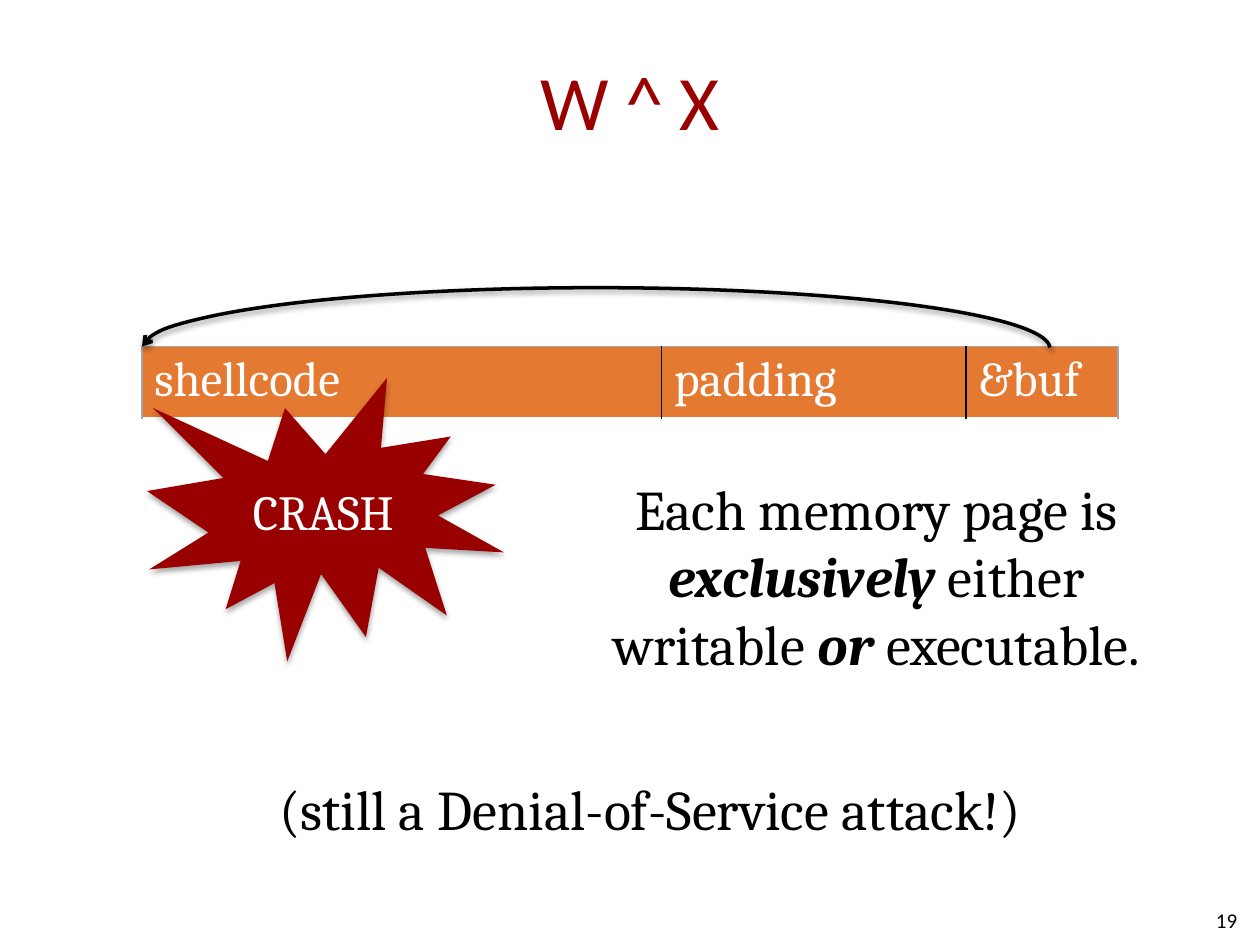
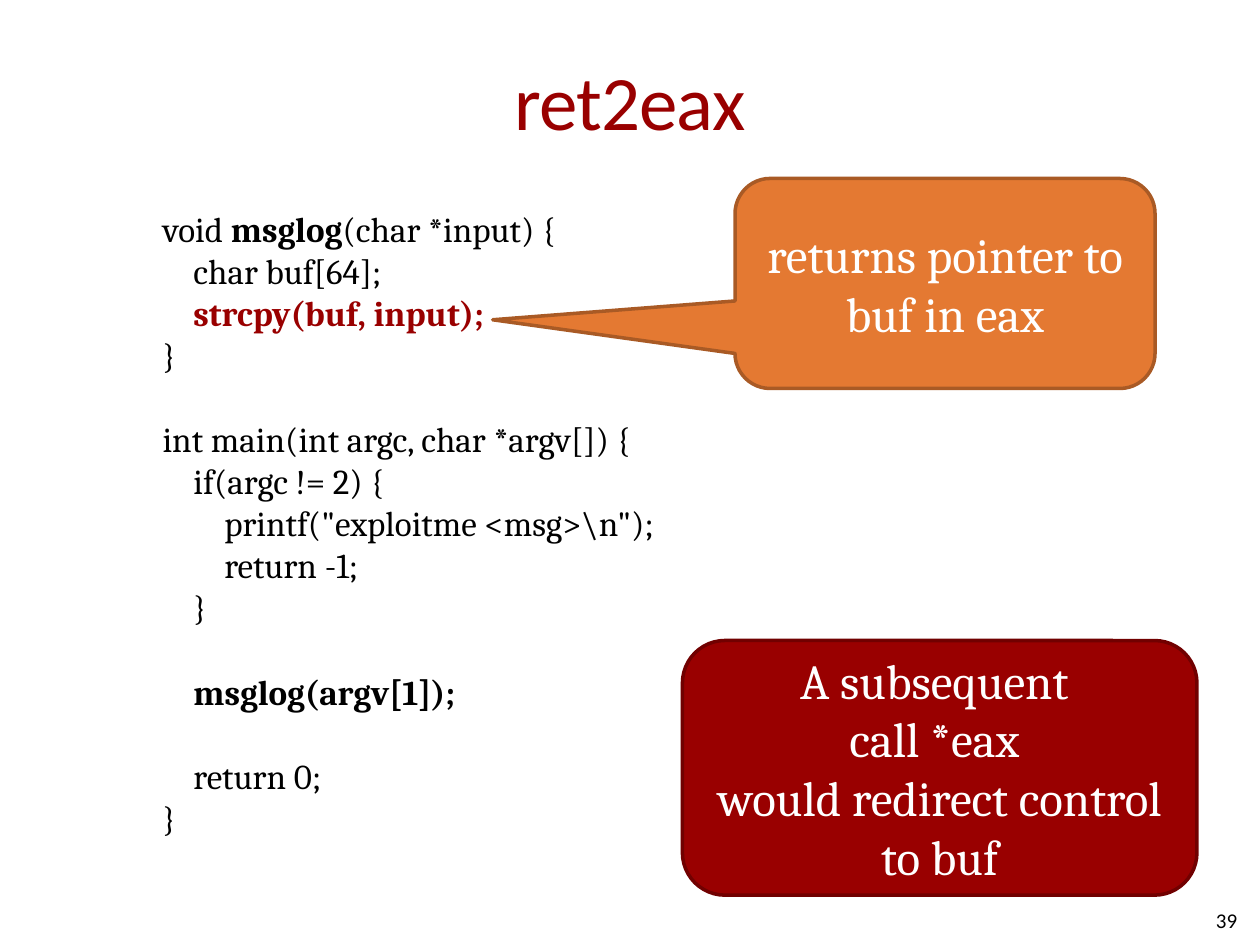
from dataclasses import dataclass
from typing import NamedTuple, Optional

from lxml import etree
from pptx import Presentation
from pptx.dml.color import RGBColor
from pptx.enum.shapes import MSO_SHAPE
from pptx.enum.text import MSO_ANCHOR, MSO_AUTO_SIZE, PP_ALIGN
from pptx.oxml.ns import qn
from pptx.util import Emu, Inches, Pt

COLORS = {
    "red": "990000", "dark_red": "710000",
    "orange": "E47932", "dark_orange": "A95A25",
    "black": "000000", "white": "FFFFFF", "gray": "A6A6A6",
}
HEAD_FONT, TEXT_FONT = "Calibri", "Cambria"
SLIDE_W, SLIDE_H = Inches(10), Inches(7.5)
COLS, ROWS = 120, 90
CODE_INDENT = Inches(0.245)
CODE_LINE = Pt(24)


class Box(NamedTuple):
    """Left, top, width and height in grid columns and rows."""
    x: float
    y: float
    w: float
    h: float

    def emu(self) -> tuple:
        cw, rh = SLIDE_W / COLS, SLIDE_H / ROWS
        return (Emu(round(self.x * cw)), Emu(round(self.y * rh)),
                Emu(round(self.w * cw)), Emu(round(self.h * rh)))


class Span(NamedTuple):
    text: str
    bold: bool = False
    italic: bool = False
    color: str = "black"


class CodeLine(NamedTuple):
    level: int
    spans: list
    gap: bool = False  # one empty line above


@dataclass
class Figure:
    kind: MSO_SHAPE
    box: Box
    fill: Optional[str] = None
    line: Optional[str] = None
    text: str = ""
    adjust: tuple = ()
    shadow: Optional[tuple] = None  # opacity %, distance pt


TITLE = Box(6, 2, 108, 15)
NUMBER = Box(91, 85.2, 28, 4.8)

# Memory layout slide
MEMORY = Box(13.5, 33, 93, 6.6)
MEMORY_CELLS = {"shellcode": 49.5, "padding": 29, "&buf": 14.5}
RULE = Box(50, 44.6, 67, 33.4)
RULE_SPANS = [Span("Each memory page is\n"), Span("exclusively", True, True),
              Span(" either\nwritable "), Span("or", True, True),
              Span(" executable.")]
NOTE = Box(21.6, 73.2, 76.9, 7.7)
RETURN_ARC = Figure(MSO_SHAPE.ARC, Box(13.5, 27.4, 86.5, 11.6), line="black",
                    adjust=(0.078, 107.845), shadow=(38, 1.6))
CRASH = Figure(MSO_SHAPE.EXPLOSION1, Box(14, 36, 34, 27), "red", text="CRASH",
               shadow=(35, 1.8))

# Code slide
CODE = Box(14.3, 19.2, 58.7, 61.8)
CODE_LINES = [
    CodeLine(0, [Span("void "), Span("msglog", True), Span("(char *input) {")]),
    CodeLine(1, [Span("char buf[64];")]),
    CodeLine(1, [Span("strcpy(buf, input);", True, color="red")]),
    CodeLine(0, [Span("}")]),
    CodeLine(0, [Span("int main(int argc, char *argv[]) {")], gap=True),
    CodeLine(1, [Span("if(argc != 2) {")]),
    CodeLine(2, [Span('printf("exploitme <msg>\\n");')]),
    CodeLine(2, [Span("return -1;")]),
    CodeLine(1, [Span("}")]),
    CodeLine(1, [Span("msglog(argv[1]);", True)], gap=True),
    CodeLine(1, [Span("return 0;")], gap=True),
    CodeLine(0, [Span("}")]),
]
REMARKS = [
    Figure(MSO_SHAPE.ROUNDED_RECTANGULAR_CALLOUT, Box(70, 17, 40, 20),
           "orange", "dark_orange", "returns pointer to buf in eax",
           (-1.077, 0.173, 0.167)),
    Figure(MSO_SHAPE.ROUNDED_RECTANGLE, Box(65, 61, 49, 24.25),
           "red", "dark_red",
           "A subsequent \vcall *eax \vwould redirect control to buf"),
]


def rgb(name: str) -> RGBColor:
    return RGBColor.from_string(COLORS[name])


def style(p, size: float, color: str = "black", font: str = TEXT_FONT,
          align=PP_ALIGN.LEFT) -> None:
    p.alignment = align
    p.font.size, p.font.name = Pt(size), font
    p.font.color.rgb = rgb(color)


def add_spans(p, spans: list) -> None:
    for span in spans:
        for i, part in enumerate(span.text.split("\n")):
            if i:
                p.add_line_break()
            if part:
                r = p.add_run()
                r.text = part
                r.font.bold, r.font.italic = span.bold, span.italic
                r.font.color.rgb = rgb(span.color)


def place(sp, box: Box) -> None:
    sp.left, sp.top, sp.width, sp.height = box.emu()


def add_text(slide, box: Box, wrap: bool = True):
    tf = slide.shapes.add_textbox(*box.emu()).text_frame
    tf.word_wrap = wrap
    return tf


def add_slide(prs, layout: int, title: str, number: int):
    """Slide with the shared title style and page number."""
    slide = prs.slides.add_slide(prs.slide_layouts[layout])
    place(slide.shapes.title, TITLE)
    tf = slide.shapes.title.text_frame
    tf.text = title
    tf.auto_size = MSO_AUTO_SIZE.NONE
    tf.vertical_anchor = MSO_ANCHOR.MIDDLE
    tf.margin_left = tf.margin_right = 0
    p = tf.paragraphs[0]
    style(p, 44, "red", HEAD_FONT, PP_ALIGN.CENTER)
    p.runs[0].font._element.set("spc", "-50")

    tf = add_text(slide, NUMBER)
    tf.vertical_anchor = MSO_ANCHOR.MIDDLE
    tf.text = str(number)
    style(tf.paragraphs[0], 12, font=HEAD_FONT, align=PP_ALIGN.RIGHT)
    return slide


def add_shadow(sp, opacity: int, distance: float) -> None:
    effects = sp._element.spPr.find(qn("a:effectLst"))
    shadow = etree.SubElement(
        effects, qn("a:outerShdw"), blurRad=str(Pt(3.1)),
        dist=str(Pt(distance)), dir="5400000", rotWithShape="0")
    color = etree.SubElement(shadow, qn("a:srgbClr"), val=COLORS["black"])
    etree.SubElement(color, qn("a:alpha"), val=str(opacity * 1000))


def add_figure(slide, fig: Figure):
    sp = slide.shapes.add_shape(fig.kind, *fig.box.emu())
    for i, value in enumerate(fig.adjust):
        sp.adjustments[i] = value
    if fig.fill:
        sp.fill.solid()
        sp.fill.fore_color.rgb = rgb(fig.fill)
    else:
        sp.fill.background()
    if fig.line:
        sp.line.color.rgb = rgb(fig.line)
        sp.line.width = Pt(2)
    else:
        sp.line.fill.background()
    sp.shadow.inherit = False
    if fig.shadow:
        add_shadow(sp, *fig.shadow)
    if fig.text:
        tf = sp.text_frame
        tf.word_wrap = True
        tf.vertical_anchor = MSO_ANCHOR.MIDDLE
        p = tf.paragraphs[0]
        p.text = fig.text
        style(p, 28, "white", align=PP_ALIGN.CENTER)
    return sp


def set_border(cell, index: int, side: str, color: str) -> None:
    ln = etree.Element(qn(f"a:ln{side}"), w=str(Pt(1)))
    fill = etree.SubElement(ln, qn("a:solidFill"))
    etree.SubElement(fill, qn("a:srgbClr"), val=COLORS[color])
    cell._tc.get_or_add_tcPr().insert(index, ln)


def add_memory_table(slide) -> None:
    last = len(MEMORY_CELLS) - 1
    table = slide.shapes.add_table(1, last + 1, *MEMORY.emu()).table
    table.first_row = table.horz_banding = False
    for i, (label, width) in enumerate(MEMORY_CELLS.items()):
        table.columns[i].width = Emu(round(width * SLIDE_W / COLS))
        cell = table.cell(0, i)
        cell.text = label
        style(cell.text_frame.paragraphs[0], 28, "white")
        cell.fill.solid()
        cell.fill.fore_color.rgb = rgb("orange")
        set_border(cell, 0, "L", "black" if i else "gray")
        set_border(cell, 1, "R", "black" if i < last else "gray")
        set_border(cell, 2, "T", "gray")


def build_memory_slide(prs) -> None:
    slide = add_slide(prs, 1, "W ^ X", 19)

    # Rule in the body placeholder, without a bullet
    body = slide.placeholders[1]
    place(body, RULE)
    body.text_frame.auto_size = MSO_AUTO_SIZE.NONE
    p = body.text_frame.paragraphs[0]
    style(p, 32, align=PP_ALIGN.CENTER)
    pPr = p._p.get_or_add_pPr()
    pPr.set("marL", "0")
    pPr.set("indent", "0")
    pPr.insert(0, etree.Element(qn("a:buNone")))
    add_spans(p, RULE_SPANS)

    # Memory row with the return arrow
    add_memory_table(slide)
    arc = add_figure(slide, RETURN_ARC)
    arc._element.spPr.xfrm.set("flipV", "1")
    etree.SubElement(arc.line._get_or_add_ln(), qn("a:tailEnd"), type="arrow")

    # Outcome
    tf = add_text(slide, NOTE, wrap=False)
    tf.text = "(still a Denial-of-Service attack!)"
    style(tf.paragraphs[0], 32, align=PP_ALIGN.RIGHT)
    add_figure(slide, CRASH)


def build_code_slide(prs) -> None:
    slide = add_slide(prs, 5, "ret2eax", 39)

    # Code listing, indented by level
    tf = add_text(slide, CODE)
    for i, line in enumerate(CODE_LINES):
        p = tf.add_paragraph() if i else tf.paragraphs[0]
        style(p, 20)
        p._p.get_or_add_pPr().set("marL", str(line.level * CODE_INDENT))
        if line.gap:
            p.space_before = CODE_LINE
        add_spans(p, line.spans)

    for remark in REMARKS:
        add_figure(slide, remark)


def main() -> None:
    prs = Presentation()
    prs.slide_width, prs.slide_height = SLIDE_W, SLIDE_H
    build_memory_slide(prs)
    build_code_slide(prs)
    prs.save("out.pptx")


if __name__ == "__main__":
    main()
